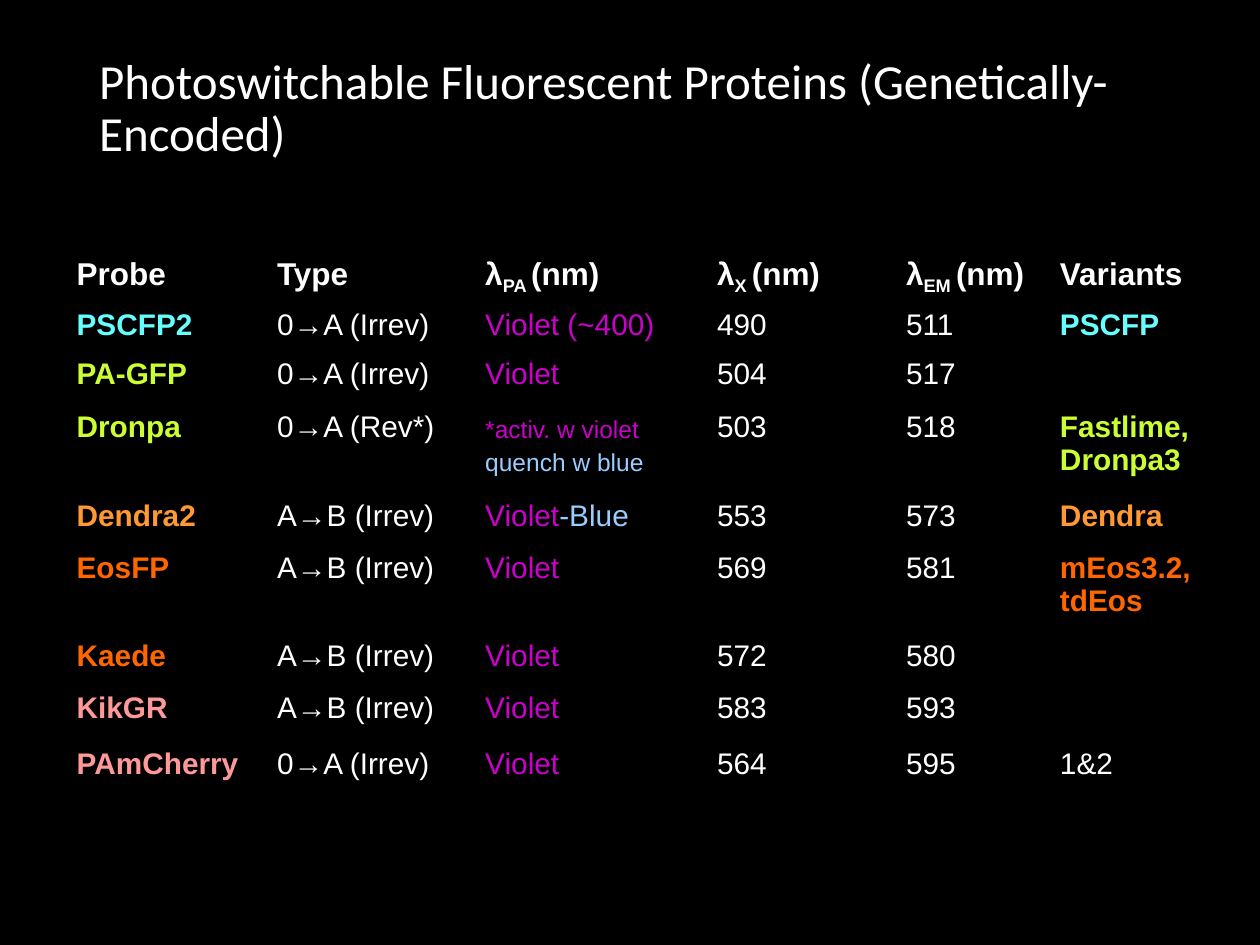
from dataclasses import dataclass

from pptx import Presentation
from pptx.dml.color import RGBColor
from pptx.enum.text import MSO_ANCHOR, PP_ALIGN
from pptx.util import Pt

NO_STYLE_NO_GRID = "{2D5ABB26-0587-4C30-8999-92F81FD0307C}"


@dataclass(frozen=True)
class Theme:
    background: str = "000000"
    text: str = "FFFFFF"
    cyan: str = "66FFFF"
    lime: str = "CCFF33"
    amber: str = "FF9933"
    orange: str = "FF6600"
    pink: str = "FF9999"
    violet: str = "CC00CC"
    blue: str = "99CCFF"
    title_font: str = "Calibri"
    body_font: str = "Arial"
    title_size: float = 28
    header_size: float = 18
    body_size: float = 17
    note_size: float = 14


THEME = Theme()


@dataclass(frozen=True)
class Span:
    text: str
    color: str = THEME.text
    size: float = THEME.body_size
    bold: bool = False
    subscript: bool = False


class Deck:
    """Holds the theme and the slide being filled."""

    def __init__(self, theme, width, height):
        self.theme = theme
        self.presentation = Presentation()
        self.presentation.slide_width = Pt(width)
        self.presentation.slide_height = Pt(height)

    def add_slide(self):
        layout = self.presentation.slide_layouts.get_by_name("Title Only")
        self.slide = self.presentation.slides.add_slide(layout)
        fill = self.slide.background.fill
        fill.solid()
        fill.fore_color.rgb = RGBColor.from_string(self.theme.background)

    def add_span(self, paragraph, span, font_name):
        run = paragraph.add_run()
        run.text = span.text
        run.font.name = font_name
        run.font.size = Pt(span.size)
        run.font.bold = span.bold
        run.font.color.rgb = RGBColor.from_string(span.color)
        if span.subscript:
            run._r.get_or_add_rPr().set("baseline", "-21000")

    def add_title(self, text, left, top, width, height):
        title = self.slide.shapes.title
        title.left, title.top = Pt(left), Pt(top)
        title.width, title.height = Pt(width), Pt(height)
        frame = title.text_frame
        frame.word_wrap = True
        frame.vertical_anchor = MSO_ANCHOR.TOP
        paragraph = frame.paragraphs[0]
        paragraph.alignment = PP_ALIGN.LEFT
        paragraph.line_spacing = 0.9
        self.add_span(paragraph, Span(text, size=self.theme.title_size),
                      self.theme.title_font)

    def add_table(self, rows, left, top, widths, heights, indents):
        table = self.slide.shapes.add_table(
            len(rows), len(widths), Pt(left), Pt(top),
            Pt(sum(widths)), Pt(sum(heights))).table
        table.horz_banding = False
        table._tbl.tblPr[0].text = NO_STYLE_NO_GRID
        for column, width in zip(table.columns, widths):
            column.width = Pt(width)
        for row, height, contents in zip(table.rows, heights, rows):
            row.height = Pt(height)
            for cell, spans, indent in zip(row.cells, contents, indents):
                self.fill_cell(cell, spans, indent)

    def fill_cell(self, cell, spans, indent):
        cell.fill.solid()
        cell.fill.fore_color.rgb = RGBColor.from_string(self.theme.background)
        cell.margin_left = cell.margin_right = 0
        cell.margin_top = cell.margin_bottom = 0
        paragraph = cell.text_frame.paragraphs[0]
        paragraph._p.get_or_add_pPr().set("marL", str(Pt(indent)))
        for span in spans:
            if span.size == self.theme.note_size:
                paragraph.line_spacing = 1.2
            self.add_span(paragraph, span, self.theme.body_font)

    def save(self):
        self.presentation.save("out.pptx")


def header(text, subscript=""):
    size = THEME.header_size
    spans = [Span(text, size=size, bold=True)]
    if subscript:
        spans += [Span(f"{subscript} ", size=size, bold=True, subscript=True),
                  Span("(nm)", size=size, bold=True)]
    return spans


def probe_row(probe, color, switch, activation, excitation, emission, variants):
    return [[Span(probe, color, bold=True)], [Span(switch)], activation,
            [Span(excitation)], [Span(emission)], variants]


def variant(text, color):
    return [Span(text, color, bold=True)]


def main():
    t = THEME
    violet = [Span("Violet", t.violet)]
    dark_to_bright = "0→A (Irrev)"
    color_change = "A→B (Irrev)"
    dronpa_light = [Span("*activ. w violet ", t.violet, t.note_size),
                    Span("quench w blue", t.blue, t.note_size)]
    rows = [
        [header("Probe"), header("Type"), header("λ", "PA"),
         header("λ", "X"), header("λ", "EM"), header("Variants")],
        probe_row("PSCFP2", t.cyan, dark_to_bright,
                  [Span("Violet (~400)", t.violet)], "490", "511",
                  variant("PSCFP", t.cyan)),
        probe_row("PA-GFP", t.lime, dark_to_bright, violet, "504", "517", []),
        probe_row("Dronpa", t.lime, "0→A (Rev*)", dronpa_light, "503", "518",
                  variant("Fastlime, Dronpa3", t.lime)),
        probe_row("Dendra2", t.amber, color_change,
                  violet + [Span("-Blue", t.blue)], "553", "573",
                  variant("Dendra", t.amber)),
        probe_row("EosFP", t.orange, color_change, violet, "569", "581",
                  variant("mEos3.2, tdEos", t.orange)),
        probe_row("Kaede", t.orange, color_change, violet, "572", "580", []),
        probe_row("KikGR", t.pink, color_change, violet, "583", "593", []),
        probe_row("PAmCherry", t.pink, dark_to_bright, violet, "564", "595",
                  [Span("1&2")]),
    ]
    deck = Deck(t, 720, 540)
    deck.add_slide()
    deck.add_title("Photoswitchable Fluorescent Proteins (Genetically-Encoded)",
                   49.5, 28.8, 621, 104.4)
    deck.add_table(rows, 26.8, 147,
                   widths=[120, 116, 129, 103, 103, 94],
                   heights=[29.5, 28, 30, 51, 29.5, 50.5, 29.5, 32.5, 27.5],
                   indents=[17, 11.5, 14.5, 18, 23, 8])
    deck.save()


if __name__ == "__main__":
    main()
